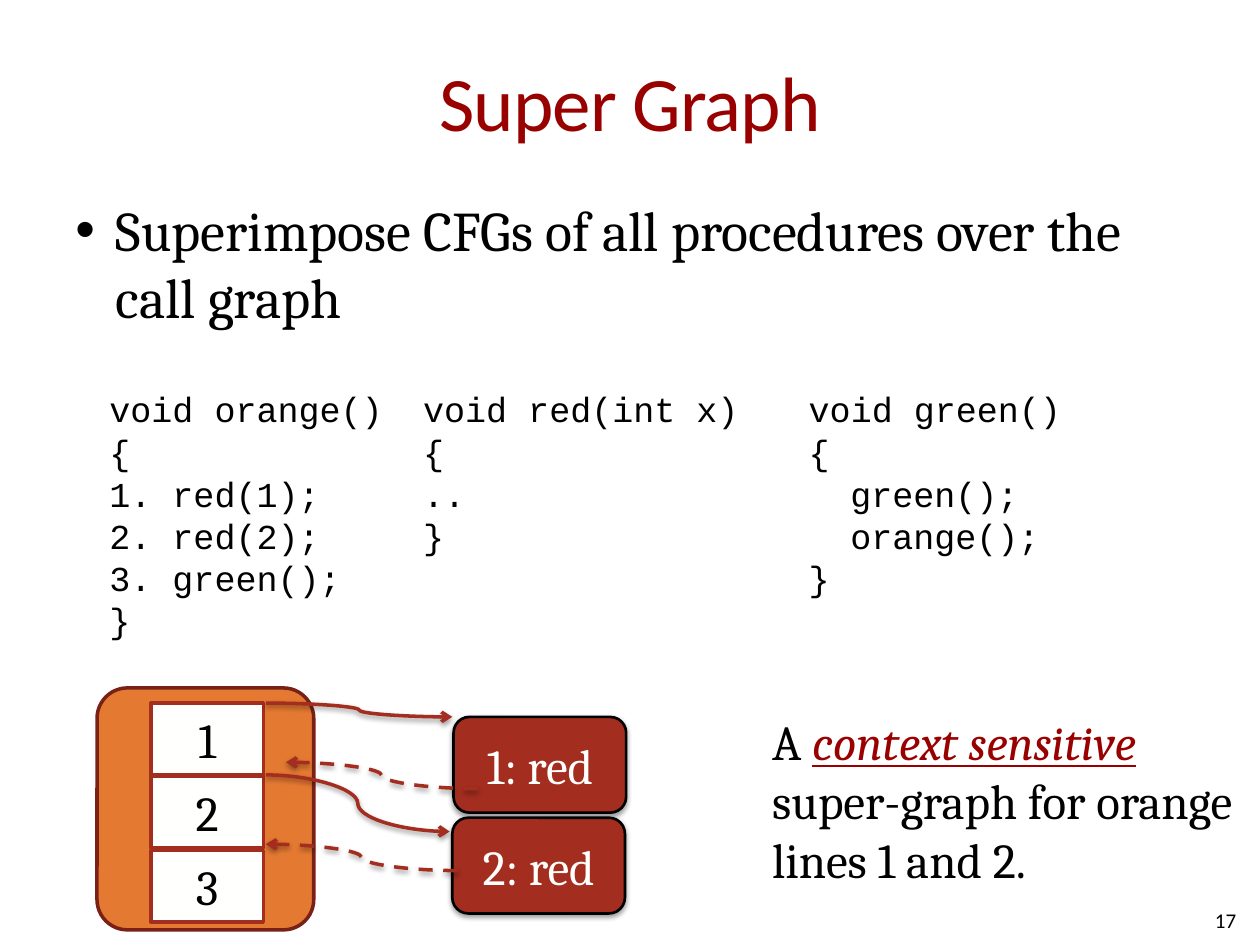
from lxml import etree
from pptx import Presentation
from pptx.dml.color import RGBColor
from pptx.enum.dml import MSO_LINE
from pptx.enum.shapes import MSO_CONNECTOR, MSO_SHAPE
from pptx.enum.text import MSO_ANCHOR, PP_ALIGN
from pptx.oxml.ns import qn
from pptx.util import Pt

PX = 9144
BOX, ROUND = MSO_SHAPE.RECTANGLE, MSO_SHAPE.ROUNDED_RECTANGLE
CURVE, DASH = MSO_CONNECTOR.CURVE, MSO_LINE.DASH
TOP, MID = MSO_ANCHOR.TOP, MSO_ANCHOR.MIDDLE
LEFT, MIDDLE, RIGHT = PP_ALIGN.LEFT, PP_ALIGN.CENTER, PP_ALIGN.RIGHT
HEAD, BODY, CODE = "Calibri", "Cambria", "Courier New"
COLORS = {"title": "990000", "ink": "000000", "paper": "FFFFFE",
          "orange": "E47932", "edge": "792117", "red": "A32D1F"}


def color(name):
    return RGBColor.from_string(COLORS[name])


class Painter:
    def __init__(self, slide):
        self.slide = slide

    def style(self, run, font, size, ink):
        run.font.name = font
        run.font.size = Pt(size)
        run.font.color.rgb = color(ink)

    def fill_text(self, frame, lines, font, size, ink, align, anchor):
        frame.word_wrap = True
        frame.vertical_anchor = anchor
        frame.text = "\n".join(lines)
        for para in frame.paragraphs:
            para.alignment = align
            for run in para.runs:
                self.style(run, font, size, ink)

    def text(self, at, lines, font, size, ink="ink", align=LEFT, anchor=TOP):
        box = self.slide.shapes.add_textbox(*[n * PX for n in at])
        self.fill_text(box.text_frame, lines, font, size, ink, align, anchor)
        return box.text_frame

    def indent(self, para, left, first=0):
        props = para._p.get_or_add_pPr()
        props.set("marL", str(left * PX))
        props.set("indent", str(first * PX))
        return props

    def bullet(self, para):
        para.space_before = Pt(6.4)
        props = self.indent(para, 32, -32)
        etree.SubElement(props, qn("a:buFont"), typeface="Arial")
        etree.SubElement(props, qn("a:buChar"), char="•")

    def shade(self, effects):
        glow = etree.SubElement(effects, qn("a:outerShdw"), blurRad=str(int(Pt(3.1))),
                                dist=str(int(Pt(1.6))), dir="5400000", rotWithShape="0")
        tint = etree.SubElement(glow, qn("a:srgbClr"), val=COLORS["ink"])
        etree.SubElement(tint, qn("a:alpha"), val="38000")

    def shape(self, kind, at, fill, edge, width, label="", ink="ink", shadow=False):
        item = self.slide.shapes.add_shape(kind, *[n * PX for n in at])
        item.fill.solid()
        item.fill.fore_color.rgb = color(fill)
        item.line.color.rgb = color(edge)
        item.line.width = Pt(width)
        item.shadow.inherit = False
        if shadow:
            self.shade(item._element.spPr.find(qn("a:effectLst")))
        if label:
            self.fill_text(item.text_frame, [label], BODY, 28, ink, MIDDLE, MID)
        return item

    def arrow(self, start, end, dashed=False):
        ends = [n * PX for n in start + end]
        link = self.slide.shapes.add_connector(CURVE, *ends)
        link.line.color.rgb = color("red")
        link.line.width = Pt(2)
        if dashed:
            link.line.dash_style = DASH
        etree.SubElement(link.line._get_or_add_ln(), qn("a:tailEnd"), type="arrow")
        self.shade(etree.SubElement(link._element.spPr, qn("a:effectLst")))


def main():
    deck = Presentation()
    deck.slide_width, deck.slide_height = 1000 * PX, 750 * PX
    art = Painter(deck.slides.add_slide(deck.slide_layouts[6]))

    title = art.text((50, 17, 900, 125), ["Super Graph"], HEAD, 44, "title", MIDDLE, MID)
    title.margin_left = title.margin_right = 0
    title.paragraphs[0].runs[0]._r.get_or_add_rPr().set("spc", "-50")

    body = art.text((50, 150, 900, 520),
                    ["Superimpose CFGs of all procedures over the call graph"], BODY, 32)
    art.bullet(body.paragraphs[0])

    frame = art.shape(ROUND, (77, 546, 172, 192), "orange", "edge", 2)
    frame.adjustments[0] = 0.14
    for label, top in (("1", 558), ("2", 616), ("3", 675)):
        art.shape(BOX, (120, top, 89, 57), "paper", "red", 2, label)
    for label, left, top in (("1: red", 360, 569), ("2: red", 359, 649)):
        art.shape(ROUND, (left, top, 137, 76), "red", "ink", 1.5, label, "paper", True)

    art.arrow((211, 558), (359, 569))
    art.arrow((363, 691), (211, 670), True)
    art.arrow((211, 615), (357, 660))
    art.arrow((379, 626), (227, 605), True)

    note = art.text((603, 560, 397, 151), ["A "], BODY, 28).paragraphs[0]
    for words, ink, marked in (("context sensitive ", "title", True),
                               ("super-graph for orange lines 1 and 2.", "ink", False)):
        run = note.add_run()
        run.text = words
        art.style(run, BODY, 28, ink)
        run.font.italic = run.font.underline = marked

    code = [
        (77, 212, ["void orange()", "{", "1. red(1);", "2. red(2);", "3. green();\v}"]),
        (326, 145, ["void red(int x)", "{", "..", "}"]),
        (632, 178, ["void green()", "{", "green();", "orange();", "}"]),
    ]
    for left, high, lines in code:
        proc = art.text((left, 303, 352, high), lines, CODE, 20)
    for call in proc.paragraphs[2:4]:
        art.indent(call, 33)

    art.text((758, 710, 233, 40), ["17"], HEAD, 12, "ink", RIGHT, MID)
    deck.save("out.pptx")


if __name__ == "__main__":
    main()
